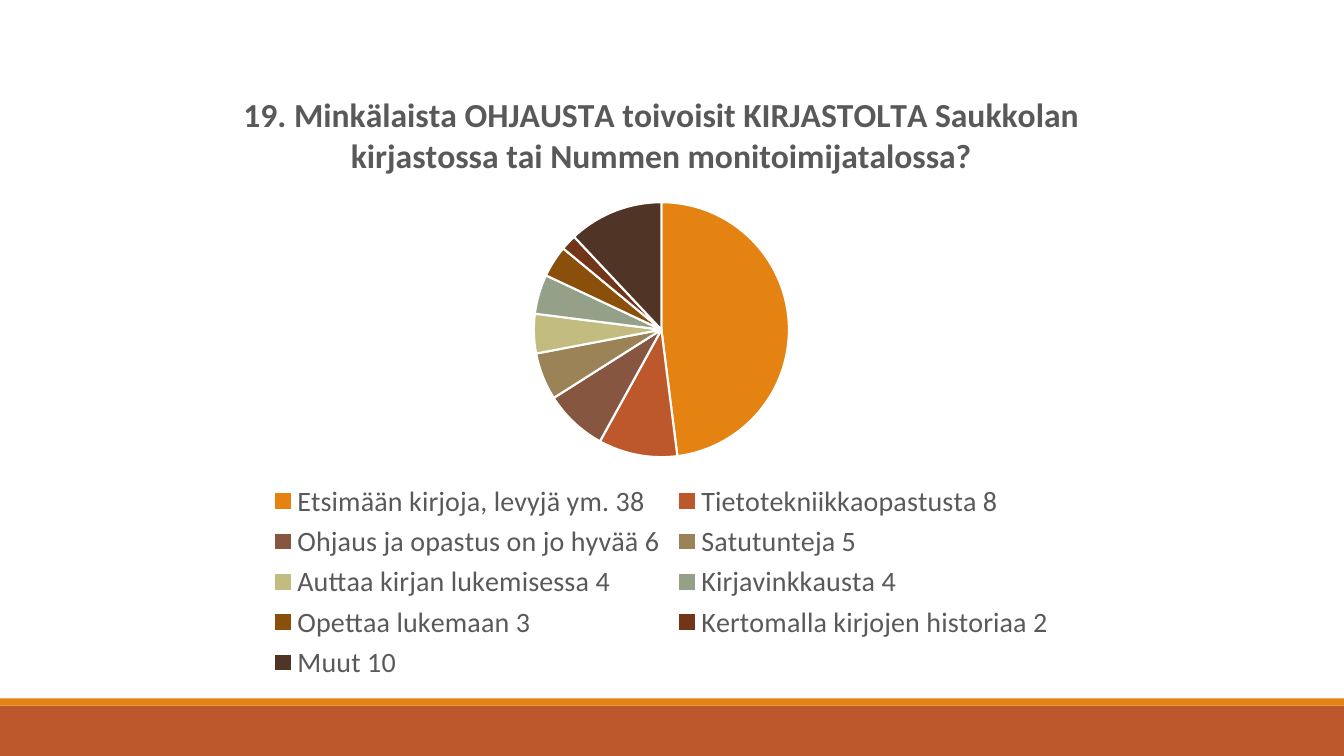
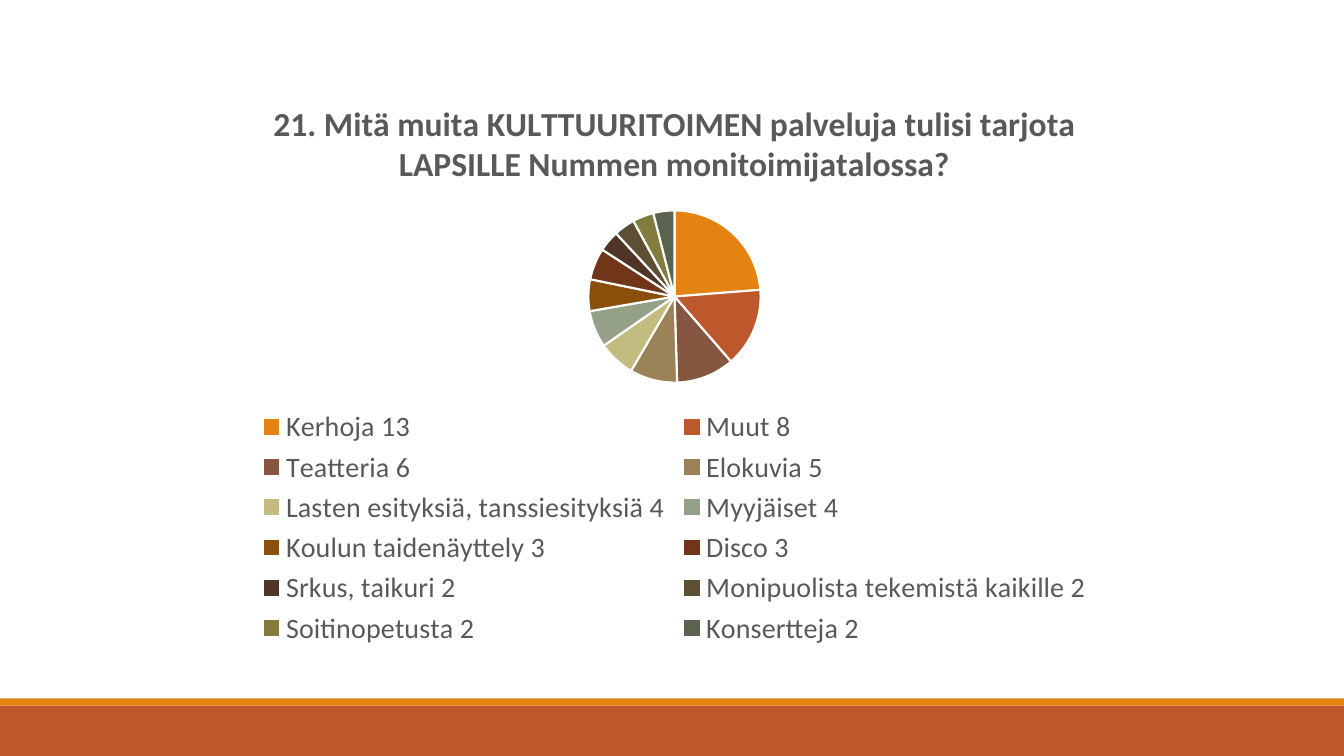
from pptx import Presentation
from pptx.chart.data import CategoryChartData
from pptx.dml.color import RGBColor
from pptx.enum.chart import XL_CHART_TYPE, XL_LEGEND_POSITION
from pptx.enum.shapes import MSO_SHAPE
from pptx.util import Inches, Pt

PIE = XL_CHART_TYPE.PIE
BOTTOM = XL_LEGEND_POSITION.BOTTOM
RECT = MSO_SHAPE.RECTANGLE

# Shared style
FONT = "Calibri"
TEXT = "595959"
SLICES = ["E48312", "BD582C", "865640", "9B8357", "C2BC80", "94A088",
          "894F0B", "71351A", "503426", "5D4F34", "837C3F", "59634F"]
BANDS = [(7, 0.5, "BD582C"), (6.93, 0.07, "E48312")]  # top, height, colour
BASE = {"name": FONT, "size": Pt(10)}
LEGEND = {"name": FONT, "size": Pt(20)}
TITLE = {"name": FONT, "size": Pt(24), "bold": True}

# Chart box, title and (category, value) pairs of each slide
SLIDES = [
    ((1.17, 0.68, 10.78, 6.12),
     "19. Minkälaista OHJAUSTA toivoisit KIRJASTOLTA Saukkolan "
     "kirjastossa tai Nummen monitoimijatalossa?",
     [("Etsimään kirjoja, levyjä ym. 38", 48),
      ("Tietotekniikkaopastusta 8", 10),
      ("Ohjaus ja opastus on jo hyvää 6", 8),
      ("Satutunteja 5", 6),
      ("Auttaa kirjan lukemisessa 4", 5),
      ("Kirjavinkkausta 4", 5),
      ("Opettaa lukemaan 3", 4),
      ("Kertomalla kirjojen historiaa 2", 2),
      ("Muut 10", 12)]),
    ((1.58, 0.77, 10.22, 5.69),
     "21. Mitä muita KULTTUURITOIMEN palveluja tulisi tarjota "
     "LAPSILLE Nummen monitoimijatalossa?",
     [("Kerhoja 13", 24),
      ("Muut 8", 15),
      ("Teatteria 6", 11),
      ("Elokuvia 5", 9),
      ("Lasten esityksiä, tanssiesityksiä 4", 7),
      ("Myyjäiset 4", 7),
      ("Koulun taidenäyttely 3", 6),
      ("Disco 3", 6),
      ("Srkus, taikuri 2", 4),
      ("Monipuolista tekemistä kaikille 2", 4),
      ("Soitinopetusta 2", 4),
      ("Konsertteja 2", 4)]),
]


def rgb(value):
    return RGBColor.from_string(value)


def set_font(font, style, color):
    for key, value in style.items():
        setattr(font, key, value)
    font.color.rgb = rgb(color)


prs = Presentation()
prs.slide_width = Inches(13.33)
prs.slide_height = Inches(7.5)

for box, title, answers in SLIDES:
    s = prs.slides.add_slide(prs.slide_layouts[6])

    # Footer bands
    for top, height, color in BANDS:
        sp = s.shapes.add_shape(RECT, 0, Inches(top), prs.slide_width, Inches(height))
        sp.shadow.inherit = False
        sp.fill.solid()
        sp.fill.fore_color.rgb = rgb(color)
        sp.line.fill.background()

    # Pie chart
    data = CategoryChartData()
    data.categories = [name for name, _ in answers]
    data.add_series("Series 1", [value for _, value in answers])
    chart = s.shapes.add_chart(PIE, *map(Inches, box), data).chart
    set_font(chart.font, BASE, "000000")

    # Chart title
    chart.has_title = True
    chart.chart_title.include_in_layout = False
    p = chart.chart_title.text_frame.paragraphs[0]
    r = p.add_run()
    r.text = title
    set_font(r.font, TITLE, TEXT)

    # Legend
    chart.has_legend = True
    chart.legend.position = BOTTOM
    chart.legend.include_in_layout = False
    set_font(chart.legend.font, LEGEND, TEXT)

    # Slices
    plot = chart.plots[0]
    plot.vary_by_categories = True
    for i, color in enumerate(SLICES[:len(answers)]):
        fmt = plot.series[0].points[i].format
        fmt.fill.solid()
        fmt.fill.fore_color.rgb = rgb(color)
        fmt.line.color.rgb = rgb("FFFFFF")
        fmt.line.width = Pt(1.5)

prs.save("out.pptx")
